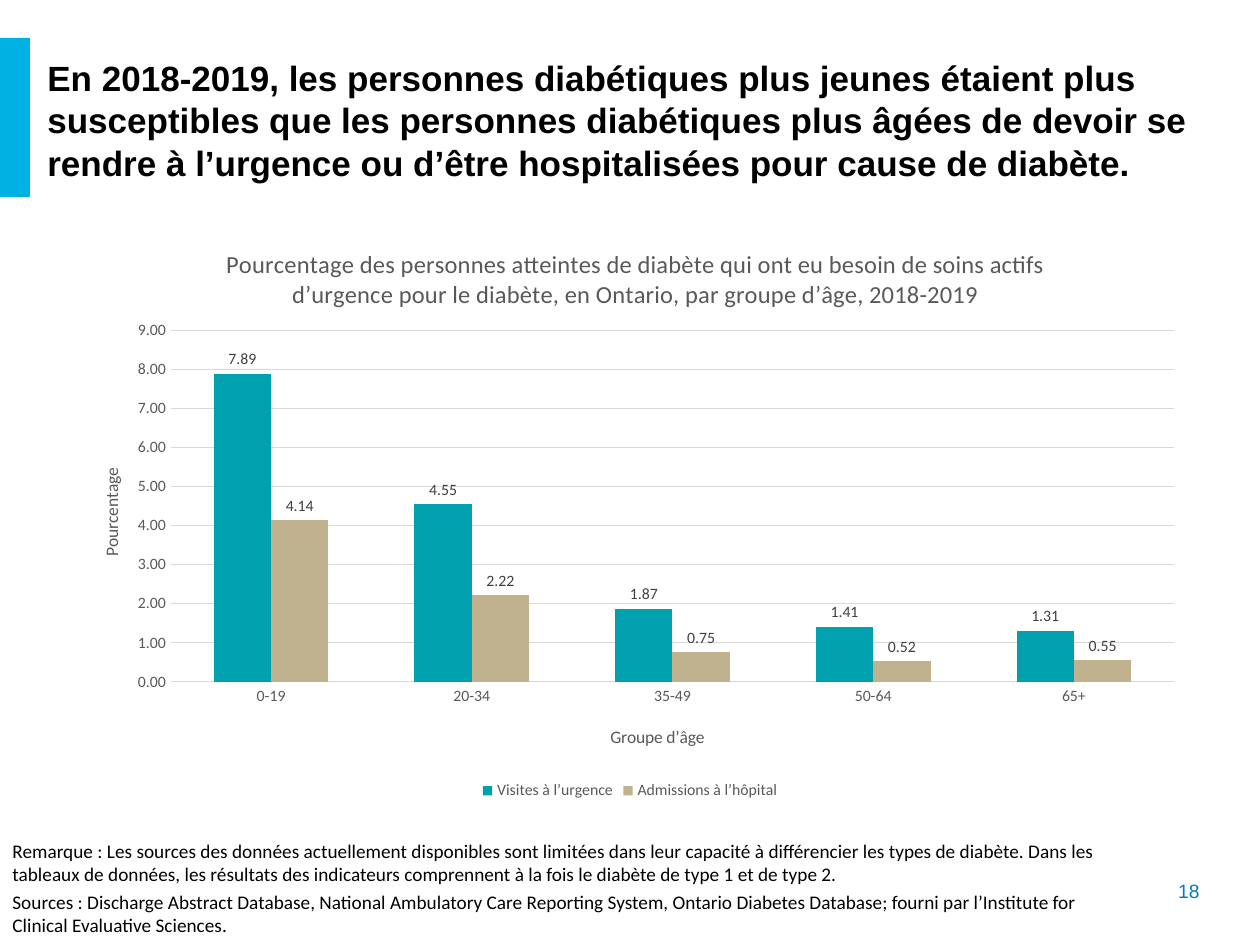
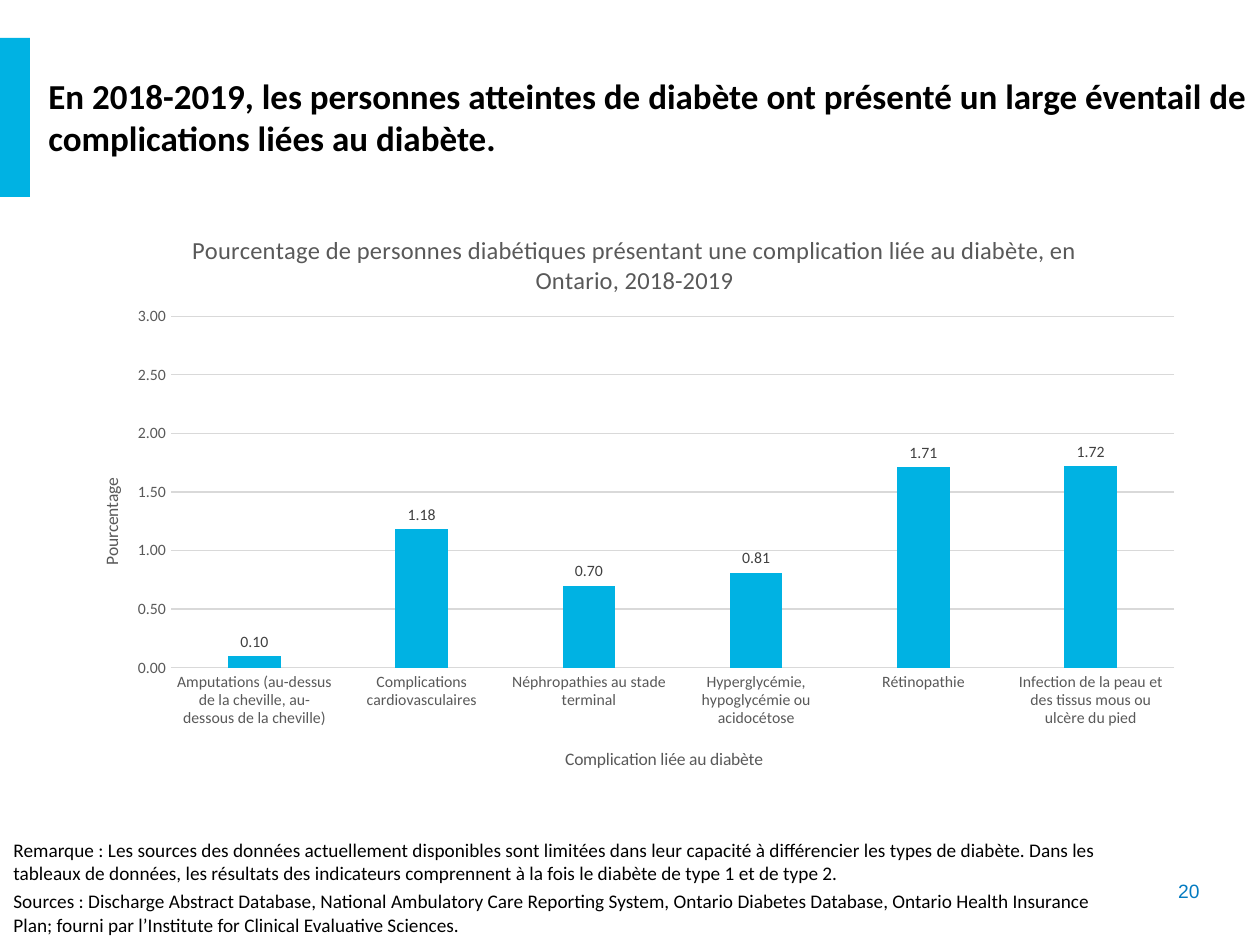
import pptx
import pptx.chart.data
import pptx.dml.color
import pptx.enum.chart
import pptx.enum.dml
import pptx.enum.shapes
import pptx.enum.text
import pptx.oxml
import pptx.util
from pptx.oxml.ns import qn

PX = 914400 // 126
RGB = pptx.dml.color.RGBColor
SKY = RGB(0x00, 0xB2, 0xE3)
TEAL = RGB(0x00, 0xA0, 0xAF)
SAND = RGB(0xC1, 0xB2, 0x8F)
PAGE_BLUE = RGB(0x04, 0x7B, 0xC1)
BLACK = RGB(0, 0, 0)
WHITE = RGB(0xFF, 0xFF, 0xFF)
LABEL_GREY = RGB(0x40, 0x40, 0x40)
TEXT_GREY = RGB(0x59, 0x59, 0x59)
GRID_GREY = RGB(0xD9, 0xD9, 0xD9)
ALIGN = pptx.enum.text.PP_ALIGN
RECT = pptx.enum.shapes.MSO_SHAPE.RECTANGLE

REMARK = ("Remarque : Les sources des données actuellement disponibles sont limitées dans leur "
          "capacité à différencier les types de diabète. Dans les tableaux de données, les résultats "
          "des indicateurs comprennent à la fois le diabète de type 1 et de type 2.")
SOURCES = "Sources : Discharge Abstract Database, National Ambulatory Care Reporting System, "

SLIDES = [
    dict(
        number="18",
        title="En 2018-2019, les personnes diabétiques plus jeunes étaient plus susceptibles que les "
              "personnes diabétiques plus âgées de devoir se rendre à l’urgence ou d’être "
              "hospitalisées pour cause de diabète.",
        title_font="Arial", title_box=(35, 50, 1225, 140),
        sources=SOURCES + "Ontario Diabetes Database; fourni par l’Institute for Clinical "
                          "Evaluative Sciences.",
        note_at=(0, 833), chart_top=219,
        chart_title="Pourcentage des personnes atteintes de diabète qui ont eu besoin de soins actifs "
                    "d’urgence pour le diabète, en Ontario, par groupe d’âge, 2018-2019",
        chart_title_at=(0.14, 0.04),
        x_title="Groupe d’âge", x_title_at=(0.48, 0.86), y_title_at=(0.03, 0.42),
        categories=["0-19", "20-34", "35-49", "50-64", "65+"],
        series=[("Visites à l’urgence", [7.89, 4.55, 1.87, 1.41, 1.31], TEAL),
                ("Admissions à l’hôpital", [4.14, 2.22, 0.75, 0.52, 0.55], SAND)],
        y_max=9, y_step=1, number_format="#,##0.00", gap=150, overlap=0,
    ),
    dict(
        number="20",
        title="En 2018-2019, les personnes atteintes de diabète ont présenté un large éventail de "
              "complications liées au diabète.",
        title_font="Calibri", title_box=(36, 68, 1224, 97),
        sources=SOURCES + "Ontario Diabetes Database, Ontario Health Insurance Plan; fourni par "
                          "l’Institute for Clinical Evaluative Sciences.",
        note_at=(1, 832), chart_top=205,
        chart_title="Pourcentage de personnes diabétiques présentant une complication liée au diabète, "
                    "en Ontario, 2018-2019",
        chart_title_at=(0.11, 0.04),
        x_title="Complication liée au diabète", x_title_at=(0.44, 0.92), y_title_at=(0.03, 0.46),
        categories=["Amputations (au-dessus de la cheville, au-dessous de la cheville)",
                    "Complications cardiovasculaires",
                    "Néphropathies au stade terminal",
                    "Hyperglycémie, hypoglycémie ou acidocétose",
                    "Rétinopathie",
                    "Infection de la peau et des tissus mous ou ulcère du pied"],
        series=[("Series 1", [0.1, 1.18, 0.7, 0.81, 1.71, 1.72], SKY)],
        y_max=3, y_step=0.5, number_format="####0.00", gap=219, overlap=-27,
    ),
]


def write(tf, *texts, size=11, font="Calibri", color=BLACK, bold=False, align=None, before=None):
    """Put one paragraph per text into the frame."""
    for i, text in enumerate(texts):
        p = tf.add_paragraph() if i else tf.paragraphs[0]
        p.alignment = align
        if before is not None:
            p.space_before = pptx.util.Pt(before)
        r = p.add_run()
        r.text = text
        r.font.size = pptx.util.Pt(size)
        r.font.name = font
        r.font.bold = bold
        r.font.color.rgb = color


def place(parent, index, **fractions):
    """Fix a chart part at fractions (x, y, w, h) of the chart's size."""
    for old in parent.findall(qn("c:layout")):
        parent.remove(old)
    layout = pptx.oxml.parse_xml(
        '<c:layout xmlns:c="http://schemas.openxmlformats.org/drawingml/2006/chart">'
        '<c:manualLayout/></c:layout>')
    manual = layout[0]
    if "w" in fractions:
        manual.makeelement
        target = manual.makeelement(qn("c:layoutTarget"), {"val": "inner"})
        manual.append(target)
    for axis in "xy":
        manual.append(manual.makeelement(qn(f"c:{axis}Mode"), {"val": "edge"}))
    for key, value in fractions.items():
        manual.append(manual.makeelement(qn(f"c:{key}"), {"val": str(value)}))
    parent.insert(index, layout)


prs = pptx.Presentation()
prs.slide_width = 1260 * PX
prs.slide_height = 945 * PX

for page in SLIDES:
    s = prs.slides.add_slide(prs.slide_layouts[6])

    # Page number and side band
    number = s.shapes.add_textbox(*(n * PX for n in (1065, 873, 147, 37)))
    number.text_frame.word_wrap = True
    write(number.text_frame, page["number"], font="Arial", color=PAGE_BLUE, align=ALIGN.RIGHT)
    band = s.shapes.add_shape(RECT, *(n * PX for n in (0, 38, 30, 159)))
    band.shadow.inherit = False
    band.fill.solid()
    band.fill.fore_color.rgb = SKY
    band.line.fill.background()

    # Title
    title = s.shapes.add_shape(RECT, *(n * PX for n in page["title_box"]))
    title.shadow.inherit = False
    title.fill.background()
    title.line.color.rgb = WHITE
    title.line.width = pptx.util.Pt(3)
    title.line.dash_style = pptx.enum.dml.MSO_LINE.ROUND_DOT
    title.text_frame.word_wrap = True
    write(title.text_frame, page["title"], size=20, font=page["title_font"], bold=True,
          align=ALIGN.LEFT)

    # Remark and sources
    left, top = page["note_at"]
    note = s.shapes.add_textbox(left * PX, top * PX, 1121 * PX, 113 * PX)
    note.text_frame.word_wrap = True
    write(note.text_frame, REMARK, page["sources"], before=3)

    # Chart
    data = pptx.chart.data.CategoryChartData(number_format=page["number_format"])
    data.categories = page["categories"]
    for name, values, color in page["series"]:
        data.add_series(name, values)
    chart = s.shapes.add_chart(
        pptx.enum.chart.XL_CHART_TYPE.COLUMN_CLUSTERED,
        63 * PX, page["chart_top"] * PX, 1134 * PX, 586 * PX, data).chart
    chart.font.size = pptx.util.Pt(10)
    chart.font.name = "Calibri"
    chart.font.color.rgb = BLACK
    place(chart.plots[0]._element.getparent(), 0, x=0.095, y=0.19, w=0.885, h=0.6)

    x_axis, y_axis = chart.category_axis, chart.value_axis
    chart.has_title = True
    for heading, text, size, (x, y) in [
            (chart.chart_title, page["chart_title"], 14, page["chart_title_at"]),
            (x_axis.axis_title, page["x_title"], 10, page["x_title_at"]),
            (y_axis.axis_title, "Pourcentage", 10, page["y_title_at"])]:
        write(heading.text_frame, text, size=size, color=TEXT_GREY)
        place(heading._element, 1, x=x, y=y)
    y_body = y_axis.axis_title.text_frame._txBody.bodyPr
    y_body.set("rot", "-5400000")
    y_body.set("vert", "horz")

    for axis in (x_axis, y_axis):
        axis.major_tick_mark = pptx.enum.chart.XL_TICK_MARK.NONE
        axis.minor_tick_mark = pptx.enum.chart.XL_TICK_MARK.NONE
        axis.tick_labels.font.size = pptx.util.Pt(9)
        axis.tick_labels.font.name = "Calibri"
        axis.tick_labels.font.color.rgb = TEXT_GREY
    y_axis.minimum_scale = 0
    y_axis.maximum_scale = page["y_max"]
    y_axis.major_unit = page["y_step"]
    y_axis.tick_labels.number_format = page["number_format"]
    y_axis.tick_labels.number_format_is_linked = False
    y_axis.format.line.fill.background()
    for line in (x_axis.format.line, y_axis.major_gridlines.format.line):
        line.color.rgb = GRID_GREY
        line.width = pptx.util.Pt(0.75)

    plot = chart.plots[0]
    plot.vary_by_categories = False
    plot.gap_width = page["gap"]
    plot.overlap = page["overlap"]
    for series, (name, values, color) in zip(plot.series, page["series"]):
        series.format.fill.solid()
        series.format.fill.fore_color.rgb = color
        labels = series.data_labels
        labels.show_value = True
        labels.position = pptx.enum.chart.XL_LABEL_POSITION.OUTSIDE_END
        labels.number_format = page["number_format"]
        labels.number_format_is_linked = False
        labels.font.size = pptx.util.Pt(9)
        labels.font.name = "Calibri"
        labels.font.color.rgb = LABEL_GREY

    chart.has_legend = len(page["series"]) > 1
    if chart.has_legend:
        chart.legend.position = pptx.enum.chart.XL_LEGEND_POSITION.BOTTOM
        chart.legend.include_in_layout = False
        chart.legend.font.size = pptx.util.Pt(9)
        chart.legend.font.name = "Calibri"
        chart.legend.font.color.rgb = TEXT_GREY

prs.save("out.pptx")
